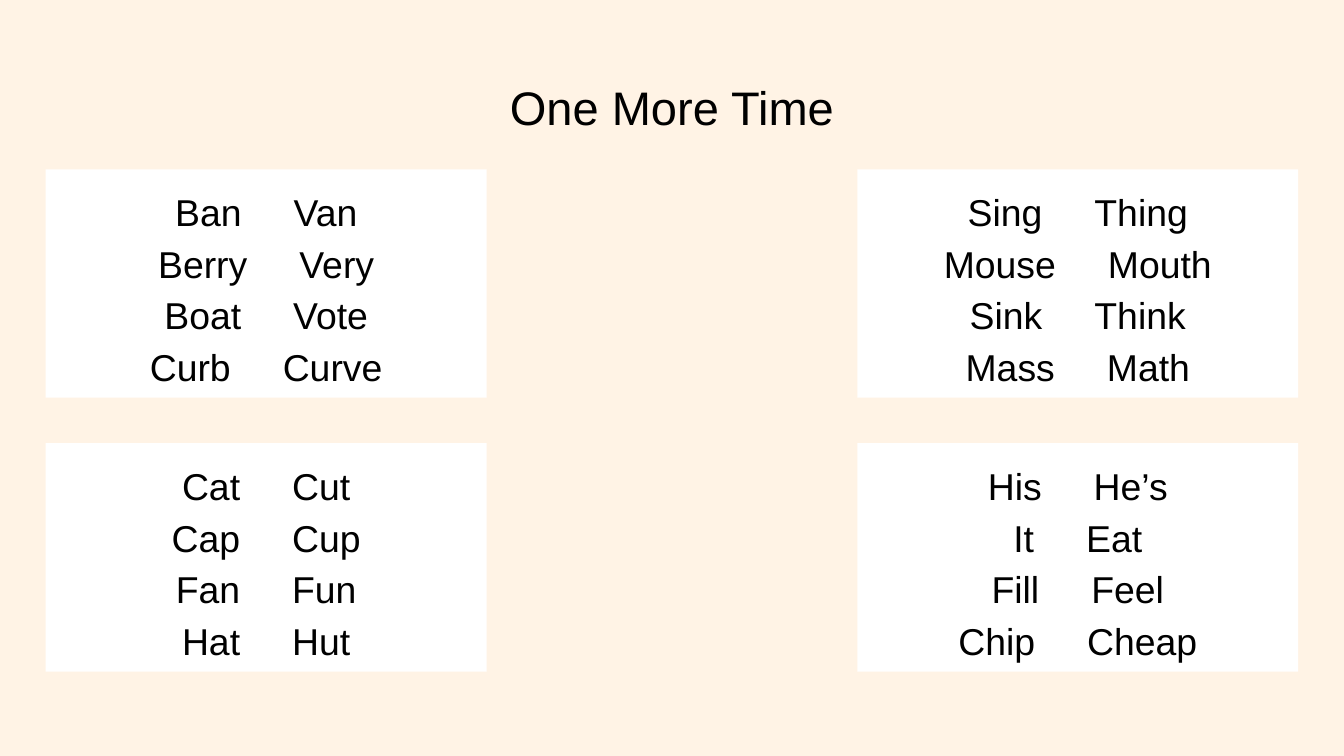
from pptx import Presentation
from pptx.dml.color import RGBColor
from pptx.enum.shapes import MSO_SHAPE
from pptx.enum.text import MSO_ANCHOR, MSO_AUTO_SIZE, PP_ALIGN
from pptx.util import Pt

COLORS = {"page": "FFF3E5", "card": "FFFFFF", "text": "000000"}
FONT = "Arial"
GAP = 22.24
CARDS = [
    [("Ban", "Van"), ("Berry", "Very"), ("Boat", "Vote"), ("Curb", "Curve")],
    [("Sing", "Thing"), ("Mouse", "Mouth"), ("Sink", "Think"), ("Mass", "Math")],
    [("Cat", "Cut"), ("Cap", "Cup"), ("Fan", "Fun"), ("Hat", "Hut")],
    [("His", "He’s"), ("It", "Eat"), ("Fill", "Feel"), ("Chip", "Cheap")],
]


def paint(fill, name):
    """Give a fill one solid colour."""
    fill.solid()
    fill.fore_color.rgb = RGBColor.from_string(COLORS[name])


def style(run, size):
    """Set the font of a run."""
    run.font.name = FONT
    run.font.size = Pt(size)
    run.font.color.rgb = RGBColor.from_string(COLORS["text"])


def inset(frame):
    """Set equal margins, wrapping and top anchor."""
    frame.margin_left = frame.margin_right = Pt(7.2)
    frame.margin_top = frame.margin_bottom = Pt(7.2)
    frame.word_wrap = True
    frame.vertical_anchor = MSO_ANCHOR.TOP


def add_title(slide, box, text):
    """Place the centred slide title."""
    title = slide.shapes.add_textbox(*map(Pt, box))
    frame = title.text_frame
    inset(frame)
    frame.text = text
    line = frame.paragraphs[0]
    line.alignment = PP_ALIGN.CENTER
    style(line.runs[0], 25.2)


def add_card(slide, box, pairs):
    """Place a card of word pairs, each pair split by one widened space."""
    card = slide.shapes.add_shape(MSO_SHAPE.RECTANGLE, *map(Pt, box))
    card.shadow.inherit = False
    card.line.fill.background()
    paint(card.fill, "card")
    frame = card.text_frame
    inset(frame)
    frame.auto_size = MSO_AUTO_SIZE.SHAPE_TO_FIT_TEXT
    for row, (left, right) in enumerate(pairs):
        line = frame.add_paragraph() if row else frame.paragraphs[0]
        line.alignment = PP_ALIGN.CENTER
        line.line_spacing = 1.15
        for text in (left, " ", right):
            run = line.add_run()
            run.text = text
            style(run, 20)
            if text == " ":
                run.font._element.set("spc", str(round(GAP * 100)))


def add_grid(slide, box, cards):
    """Place the cards in two columns and two rows at the box's corners."""
    x, y, width, height = box
    wide, high = 236.2, 122.4
    for index, pairs in enumerate(cards):
        row, col = divmod(index, 2)
        left = x + col * (width - wide)
        top = y + row * (height - high)
        add_card(slide, (left, top, wide, high), pairs)


def main():
    """Build and save the slide."""
    deck = Presentation()
    deck.slide_width, deck.slide_height = Pt(720), Pt(405)
    slide = deck.slides.add_slide(deck.slide_layouts[6])
    paint(slide.background.fill, "page")
    add_title(slide, (24.5, 35, 671, 45.1), "One More Time")
    add_grid(slide, (24.5, 90.7, 671, 269.2), CARDS)
    deck.save("out.pptx")


if __name__ == "__main__":
    main()
